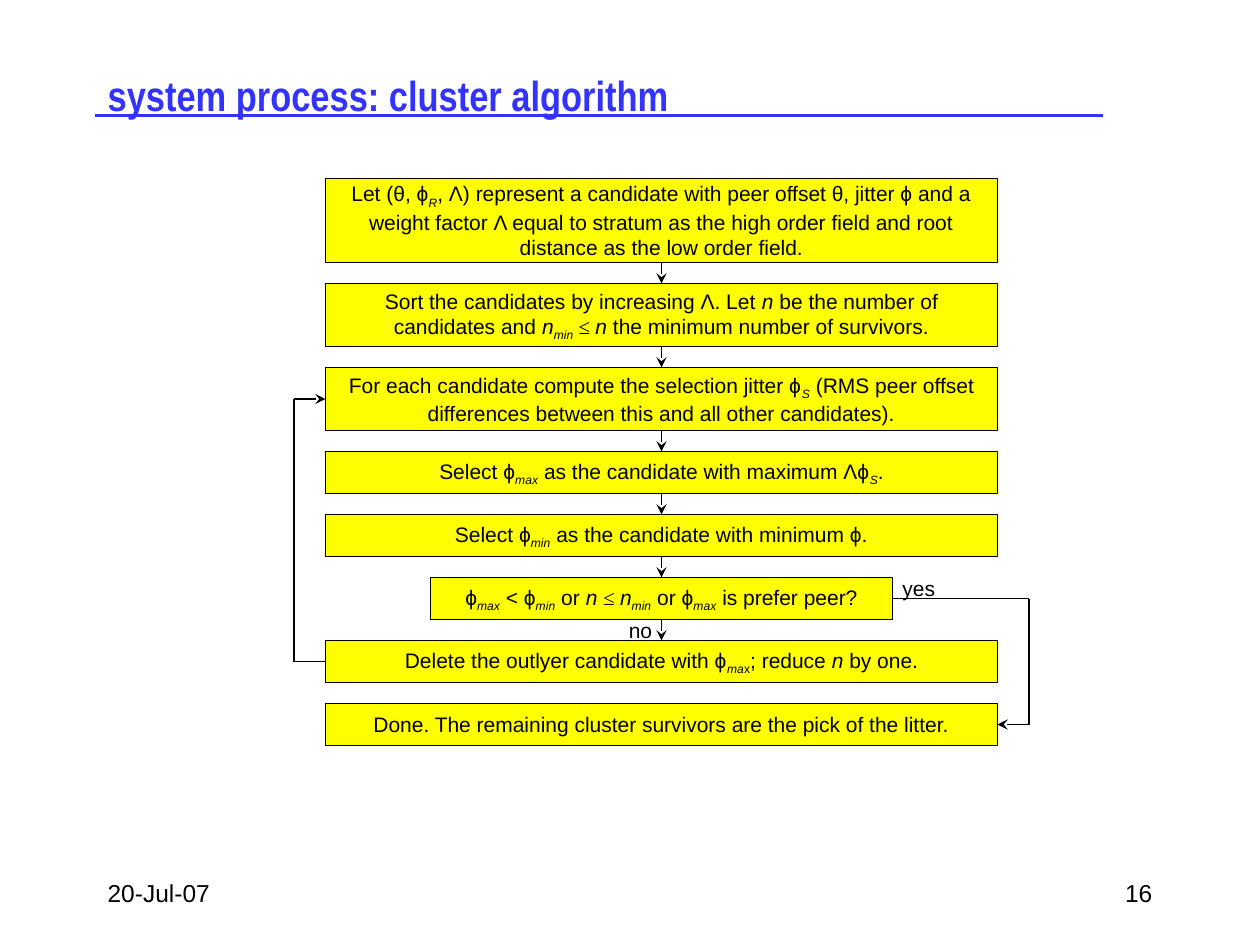
"""Build the slide that shows the cluster algorithm as a flow chart."""
from lxml.etree import SubElement
from pptx import Presentation
from pptx.dml.color import RGBColor
from pptx.enum.shapes import MSO_CONNECTOR, MSO_SHAPE
from pptx.enum.text import MSO_ANCHOR, PP_ALIGN
from pptx.oxml.ns import qn
from pptx.util import Pt

SCALE = 9525
BLACK = RGBColor(0x00, 0x00, 0x00)
BLUE = RGBColor(0x33, 0x33, 0xFF)
YELLOW = RGBColor(0xFF, 0xFF, 0x00)

PLAIN, ITALIC, SUB, SUB_UPRIGHT, SYMBOL = "plain", "italic", "sub", "sub upright", "symbol"
LABELS = [
    ("20-Jul-07", (72, 656, 200, 48), dict(size=14)),
    ("16", (688, 656, 200, 48), dict(size=14, align=PP_ALIGN.RIGHT)),
    ("system process: cluster algorithm", (72, 40, 816, 64),
     dict(size=24, font="Arial Narrow", color=BLUE, bold=True)),
    ("no", (472, 472, 32, 16), dict(align=PP_ALIGN.CENTER, inset=0)),
    ("yes", (680, 440, 40, 16), dict(align=PP_ALIGN.CENTER, inset=0)),
]
STEPS = [
    ("define", 512, 64, [
        ("Let (θ, ϕ", PLAIN), ("R", SUB),
        (", Λ) represent a candidate with peer offset θ, jitter ϕ and a weight factor Λ equal to "
         "stratum as the high order field and root distance as the low order field.", PLAIN)]),
    ("sort", 512, 48, [
        ("Sort the candidates by increasing Λ. Let ", PLAIN), ("n", ITALIC),
        (" be the number of candidates and ", PLAIN), ("n", ITALIC), ("min", SUB),
        (" ≤ ", SYMBOL), ("n", ITALIC), (" the minimum number of survivors.", PLAIN)]),
    ("compute", 512, 48, [
        ("For each candidate compute the selection jitter ϕ", PLAIN), ("S", SUB),
        (" (RMS peer offset differences between this and all other candidates).", PLAIN)]),
    ("maximum", 512, 32, [
        ("Select ϕ", PLAIN), ("max", SUB), (" as the candidate with maximum Λϕ", PLAIN),
        ("S", SUB), (".", PLAIN)]),
    ("minimum", 512, 32, [
        ("Select ϕ", PLAIN), ("min", SUB), (" as the candidate with minimum ϕ.", PLAIN)]),
    ("test", 352, 32, [
        ("ϕ", PLAIN), ("max", SUB), (" < ϕ", PLAIN), ("min", SUB), (" or ", PLAIN),
        ("n ", ITALIC), ("≤ ", SYMBOL), ("n", ITALIC), ("min", SUB), (" or ϕ", PLAIN),
        ("max", SUB), (" is prefer peer?", PLAIN)]),
    ("delete", 512, 32, [
        ("Delete the outlyer candidate with ϕ", PLAIN), ("ma", SUB), ("x", SUB_UPRIGHT),
        ("; reduce ", PLAIN), ("n", ITALIC), (" by one.", PLAIN)]),
    ("done", 512, 32, [
        ("Done. The remaining cluster survivors are the pick of the litter.", PLAIN)]),
]
CENTER, FIRST_TOP, GAP = 504, 136, 16
LOOP_X, EXIT_X = 224, 784
TOP, LEFT, BOTTOM, RIGHT = range(4)


def px(*lengths):
    return [length * SCALE for length in lengths]


def write(shape, runs, size=12, font="Arial", color=BLACK, bold=False,
          align=PP_ALIGN.LEFT, inset=5):
    frame = shape.text_frame
    frame.word_wrap = True
    frame.vertical_anchor = MSO_ANCHOR.MIDDLE
    frame.margin_left, frame.margin_right = px(2 * inset, 2 * inset)
    frame.margin_top, frame.margin_bottom = px(inset, inset)
    para = frame.paragraphs[0]
    para.alignment = align
    for text, style in runs:
        span = para.add_run()
        span.text = text
        span.font.size = Pt(size)
        span.font.name = "Times New Roman" if style == SYMBOL else font
        span.font.color.rgb = color
        span.font.bold = bold
        span.font.italic = style in (ITALIC, SUB)
        if style in (SUB, SUB_UPRIGHT):
            span.font._element.set("baseline", "-25000")


def add_step(page, runs, width, top, height):
    box = page.shapes.add_shape(
        MSO_SHAPE.RECTANGLE, *px(CENTER - width // 2, top, width, height))
    box.shadow.inherit = False
    box.fill.solid()
    box.fill.fore_color.rgb = YELLOW
    box.line.color.rgb = BLACK
    box.line.width = Pt(1)
    write(box, runs, align=PP_ALIGN.CENTER)
    return box


def add_line(page, start, end, begin=None, finish=None, arrow=False, color=BLACK, width=1):
    line = page.shapes.add_connector(MSO_CONNECTOR.STRAIGHT, *px(*start, *end))
    line.line.color.rgb = color
    line.line.width = Pt(width)
    if begin:
        line.begin_connect(*begin)
    if finish:
        line.end_connect(*finish)
    if arrow:
        SubElement(line.line._get_or_add_ln(), qn("a:tailEnd"), type="stealth")
    SubElement(line._element.spPr, qn("a:effectLst"))


def main():
    deck = Presentation()
    deck.slide_width, deck.slide_height = px(960, 720)
    page = deck.slides.add_slide(deck.slide_layouts[6])
    add_line(page, (72, 88), (840, 88), color=BLUE, width=2)

    boxes, middles = {}, {}
    top, previous = FIRST_TOP, None
    for name, width, height, runs in STEPS:
        box = add_step(page, runs, width, top, height)
        if previous and name != "done":
            add_line(page, (CENTER, top - GAP), (CENTER, top),
                     (previous, BOTTOM), (box, TOP), arrow=True)
        boxes[name], middles[name] = box, top + height // 2
        top, previous = top + height + GAP, box

    for source, target, side, x in [("delete", "compute", LEFT, LOOP_X),
                                    ("test", "done", RIGHT, EXIT_X)]:
        start, end = (x, middles[source]), (x, middles[target])
        add_line(page, start, start, begin=(boxes[source], side))
        add_line(page, start, end)
        add_line(page, end, end, finish=(boxes[target], side), arrow=True)

    for text, place, style in LABELS:
        write(page.shapes.add_textbox(*px(*place)), [(text, PLAIN)], **style)
    deck.save("out.pptx")


if __name__ == "__main__":
    main()
